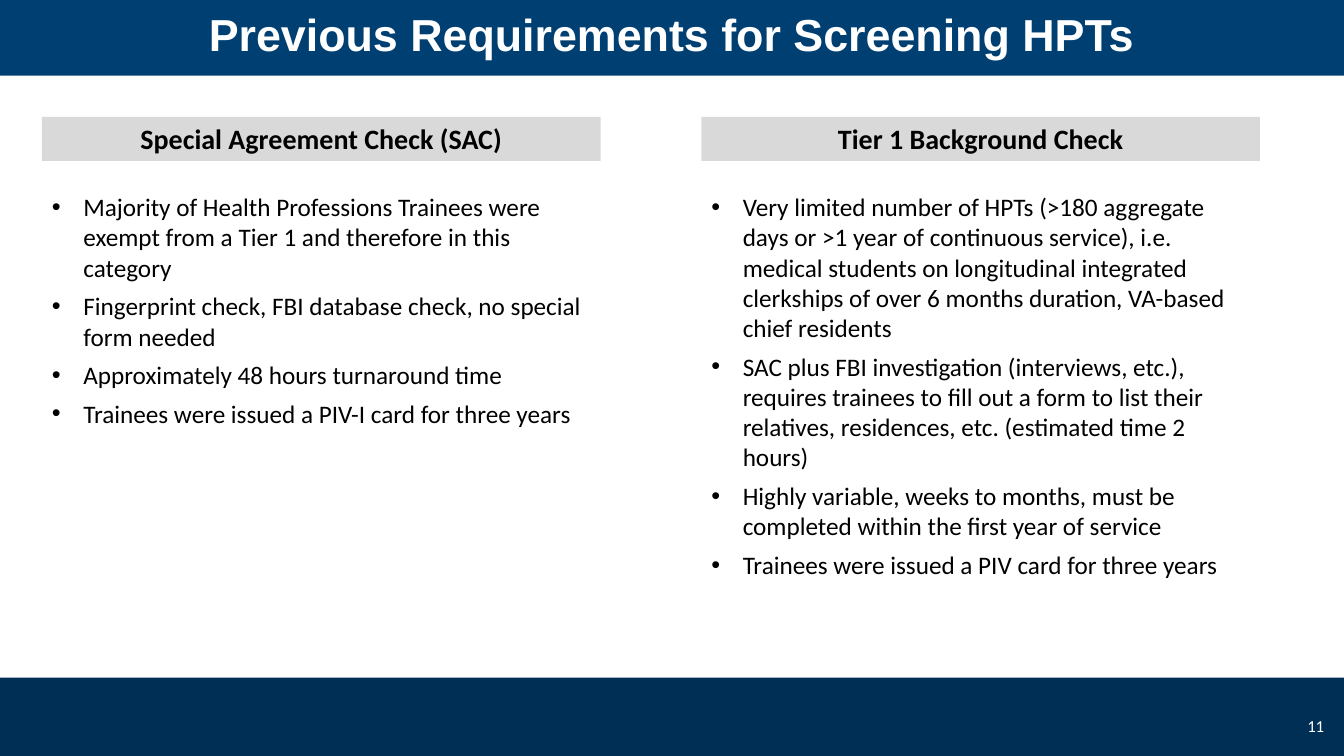
from dataclasses import dataclass

from lxml.etree import SubElement
from pptx import Presentation
from pptx.dml.color import RGBColor as Color
from pptx.enum.shapes import MSO_SHAPE as Shape
from pptx.enum.text import MSO_ANCHOR as Anchor, PP_ALIGN as Align
from pptx.oxml.ns import qn
from pptx.util import Pt


@dataclass(frozen=True)
class Theme:
    navy: Color = Color(0x00, 0x2F, 0x56)
    blue: Color = Color(0x00, 0x3F, 0x72)
    grey: Color = Color(0xD9, 0xD9, 0xD9)
    white: Color = Color(0xFF, 0xFF, 0xFF)
    black: Color = Color(0, 0, 0)
    title: int = 32
    head: int = 20
    body: int = 18
    page: int = 12


THEME = Theme()
WIDTH, HEIGHT = 960, 540
TOP, COL_W, COL_H = 83.5, 399, 365
LEFT, STEP = 30, 471
HEAD_H, LIST_Y = 31.5, 49.7
INDENT = 22.5

COLUMNS = [
    ("Special Agreement Check (SAC)", [
        "Majority of Health Professions Trainees were exempt from a Tier 1 "
        "and therefore in this category",
        "Fingerprint check, FBI database check, no special form needed",
        "Approximately 48 hours turnaround time",
        "Trainees were issued a PIV-I card for three years",
    ]),
    ("Tier 1 Background Check", [
        "Very limited number of HPTs (>180 aggregate days or >1 year of "
        "continuous service), i.e. medical students on longitudinal integrated "
        "clerkships of over 6 months duration, VA-based chief residents",
        "SAC plus FBI investigation (interviews, etc.), requires trainees to "
        "fill out a form to list their relatives, residences, etc. "
        "(estimated time 2 hours)",
        "Highly variable, weeks to months, must be completed within the first "
        "year of service",
        "Trainees were issued a PIV card for three years",
    ]),
]


def style(para, size, color, name="Calibri", bold=False):
    looks = {"size": Pt(size), "name": name, "bold": bold}
    for key, value in looks.items():
        setattr(para.font, key, value)
    para.font.color.rgb = color


def add_bar(slide, box, fill):
    bar = slide.shapes.add_shape(Shape.RECTANGLE, *map(Pt, box))
    bar.shadow.inherit = False
    bar.fill.solid()
    bar.fill.fore_color.rgb = fill
    bar.line.fill.background()
    return bar


def add_label(shape, text, align, anchor, **look):
    frame = shape.text_frame
    frame.word_wrap = True
    frame.vertical_anchor = anchor
    para = frame.paragraphs[0]
    para.text, para.alignment = text, align
    style(para, **look)


def add_bullet(para):
    """Give the paragraph a hanging round bullet."""
    props = para._p.get_or_add_pPr()
    props.set("marL", str(Pt(INDENT)))
    props.set("indent", str(-Pt(INDENT)))
    SubElement(props, qn("a:buFont"), typeface="Arial")
    SubElement(props, qn("a:buChar"), char="•")


def add_title(slide, box, text):
    bar = add_bar(slide, box, THEME.blue)
    add_label(bar, text, Align.CENTER, Anchor.MIDDLE, size=THEME.title,
              color=THEME.white, name="Arial", bold=True)


def add_column(slide, box, head, items):
    """Place a grey heading bar with a bullet list below it."""
    x, y, w, h = box
    bar = add_bar(slide, (x, y, w, HEAD_H), THEME.grey)
    add_label(bar, head, Align.CENTER, Anchor.TOP, size=THEME.head,
              color=THEME.black, bold=True)
    area = (x, y + LIST_Y, w, h - LIST_Y)
    frame = slide.shapes.add_textbox(*map(Pt, area)).text_frame
    frame.word_wrap = True
    for i, item in enumerate(items):
        para = frame.add_paragraph() if i else frame.paragraphs[0]
        para.text = item
        para.space_after = Pt(6)
        add_bullet(para)
        style(para, THEME.body, THEME.black)


def add_footer(slide, box, number):
    x, y, w, h = box
    add_bar(slide, box, THEME.navy)
    page = slide.shapes.add_textbox(*map(Pt, (x + w - 231, y + 20, 224, 29)))
    add_label(page, number, Align.RIGHT, Anchor.MIDDLE, size=THEME.page,
              color=THEME.white)


def main():
    deck = Presentation()
    deck.slide_width, deck.slide_height = Pt(WIDTH), Pt(HEIGHT)
    slide = deck.slides.add_slide(deck.slide_layouts[6])
    add_footer(slide, (0, 484, WIDTH, 57), "11")
    add_title(slide, (0, -6, WIDTH, 60),
              "Previous Requirements for Screening HPTs")
    for i, (head, items) in enumerate(COLUMNS):
        box = (LEFT + i * STEP, TOP, COL_W, COL_H)
        add_column(slide, box, head, items)
    deck.save("out.pptx")


if __name__ == "__main__":
    main()
